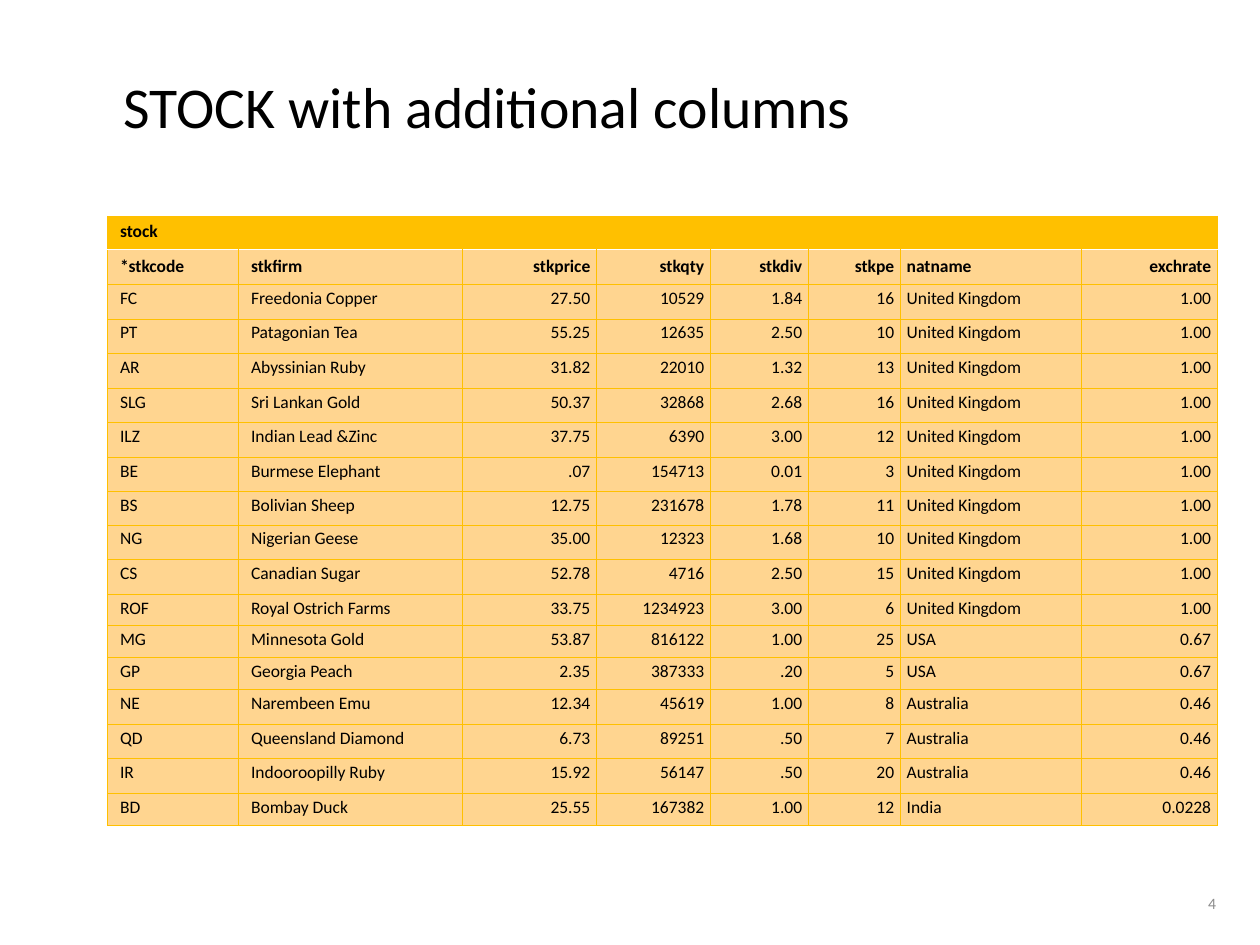
from dataclasses import dataclass

from lxml.etree import SubElement
from pptx import Presentation
from pptx.dml.color import RGBColor
from pptx.enum.text import MSO_ANCHOR, PP_ALIGN
from pptx.oxml.ns import qn
from pptx.util import Pt


@dataclass(frozen=True)
class Theme:
    font: str = "Calibri"
    ink: str = "000000"
    muted: str = "8C8C8C"
    gold: str = "FFC000"
    sand: str = "FFD590"
    white: str = "FFFFFF"
    title_size: float = 33
    table_size: float = 10
    number_size: float = 9


theme = Theme()


def write(para, text, size, color, bold=False, **layout):
    span = para.add_run()
    span.text = text
    span.font.color.rgb = RGBColor.from_string(color)
    for name, value in {"name": theme.font, "size": Pt(size), "bold": bold}.items():
        setattr(span.font, name, value)
    for name, value in layout.items():
        setattr(para, name, value)


def add_border(cell, side, color, width):
    line = SubElement(cell._tc.get_or_add_tcPr(), qn(f"a:{side}"), w=str(Pt(width)))
    SubElement(SubElement(line, qn("a:solidFill")), qn("a:srgbClr"), val=color)


deck = Presentation()
deck.slide_width, deck.slide_height = Pt(720), Pt(540)
page = deck.slides.add_slide(deck.slide_layouts[5])

title = page.shapes.title
title_place = {"left": 63.4, "top": 30.2, "width": 632.9, "height": 64.8}
for name, value in title_place.items():
    setattr(title, name, Pt(value))
title.text_frame.vertical_anchor = MSO_ANCHOR.MIDDLE
write(title.text_frame.paragraphs[0], "STOCK with additional columns",
      theme.title_size, theme.ink, alignment=PP_ALIGN.LEFT, line_spacing=0.9)

number_box = page.shapes.add_textbox(Pt(540), Pt(501.8), Pt(162), Pt(28.8))
number_box.text_frame.word_wrap = True
number_box.text_frame.vertical_anchor = MSO_ANCHOR.MIDDLE
write(number_box.text_frame.paragraphs[0], "4", theme.number_size, theme.muted,
      alignment=PP_ALIGN.RIGHT)

columns = [
    ("*stkcode", 74.9, PP_ALIGN.LEFT, 7.2),
    ("stkfirm", 128, PP_ALIGN.LEFT, 7.2),
    ("stkprice", 76.6, PP_ALIGN.RIGHT, 3.6),
    ("stkqty", 65.1, PP_ALIGN.RIGHT, 3.6),
    ("stkdiv", 56, PP_ALIGN.RIGHT, 3.6),
    ("stkpe", 52.6, PP_ALIGN.RIGHT, 3.6),
    ("natname", 103.4, PP_ALIGN.LEFT, 3.6),
    ("exchrate", 77.7, PP_ALIGN.RIGHT, 3.6),
]
nations = {
    "United Kingdom": ("1.00", [
        ("FC", "Freedonia Copper", "27.50", "10529", "1.84", "16"),
        ("PT", "Patagonian Tea", "55.25", "12635", "2.50", "10"),
        ("AR", "Abyssinian Ruby", "31.82", "22010", "1.32", "13"),
        ("SLG", "Sri Lankan Gold", "50.37", "32868", "2.68", "16"),
        ("ILZ", "Indian Lead &Zinc", "37.75", "6390", "3.00", "12"),
        ("BE", "Burmese Elephant", ".07", "154713", "0.01", "3"),
        ("BS", "Bolivian Sheep", "12.75", "231678", "1.78", "11"),
        ("NG", "Nigerian Geese", "35.00", "12323", "1.68", "10"),
        ("CS", "Canadian Sugar", "52.78", "4716", "2.50", "15"),
        ("ROF", "Royal Ostrich Farms", "33.75", "1234923", "3.00", "6"),
    ]),
    "USA": ("0.67", [
        ("MG", "Minnesota Gold", "53.87", "816122", "1.00", "25"),
        ("GP", "Georgia Peach", "2.35", "387333", ".20", "5"),
    ]),
    "Australia": ("0.46", [
        ("NE", "Narembeen Emu", "12.34", "45619", "1.00", "8"),
        ("QD", "Queensland Diamond", "6.73", "89251", ".50", "7"),
        ("IR", "Indooroopilly Ruby", "15.92", "56147", ".50", "20"),
    ]),
    "India": ("0.0228", [
        ("BD", "Bombay Duck", "25.55", "167382", "1.00", "12"),
    ]),
}
rows = [["stock"], [column[0] for column in columns]]
for nation, (rate, stocks) in nations.items():
    rows += [[*stock, nation, rate] for stock in stocks]

heights = [19.1] + [19.8] * 6 + [19.5, 19.2] + [19.8] * 2 + [18, 18, 18.4] + [19.8] * 3 + [18.2]
frame = page.shapes.add_table(len(rows), len(columns), Pt(61.4), Pt(123.6),
                              Pt(sum(column[1] for column in columns)), Pt(sum(heights)))
table = frame.table
for column, (_, width, _, _) in zip(table.columns, columns):
    column.width = Pt(width)
for row, height in zip(table.rows, heights):
    row.height = Pt(height)
table.cell(0, 0).merge(table.cell(0, len(columns) - 1))

for row_index, values in enumerate(rows):
    for column_index, (_, _, alignment, inset) in enumerate(columns):
        cell = table.cell(row_index, column_index)
        borders = {side: (theme.gold, 0.5) for side in ("lnL", "lnR", "lnT", "lnB")}
        if row_index < 2:
            borders["lnB" if row_index == 0 else "lnT"] = (theme.white, 1)
        for side, (color, width) in borders.items():
            add_border(cell, side, color, width)
        cell.fill.solid()
        cell.fill.fore_color.rgb = RGBColor.from_string(theme.sand if row_index else theme.gold)
        margins = {"margin_left": inset, "margin_right": inset,
                   "margin_top": 3.6, "margin_bottom": 3.6}
        for name, value in margins.items():
            setattr(cell, name, Pt(value))
        if column_index < len(values):
            write(cell.text_frame.paragraphs[0], values[column_index], theme.table_size, theme.ink,
                  bold=row_index < 2, alignment=alignment, space_before=Pt(5),
                  line_spacing={0: 0.88, 1: 1.0}.get(row_index, 0.8))

deck.save("out.pptx")
